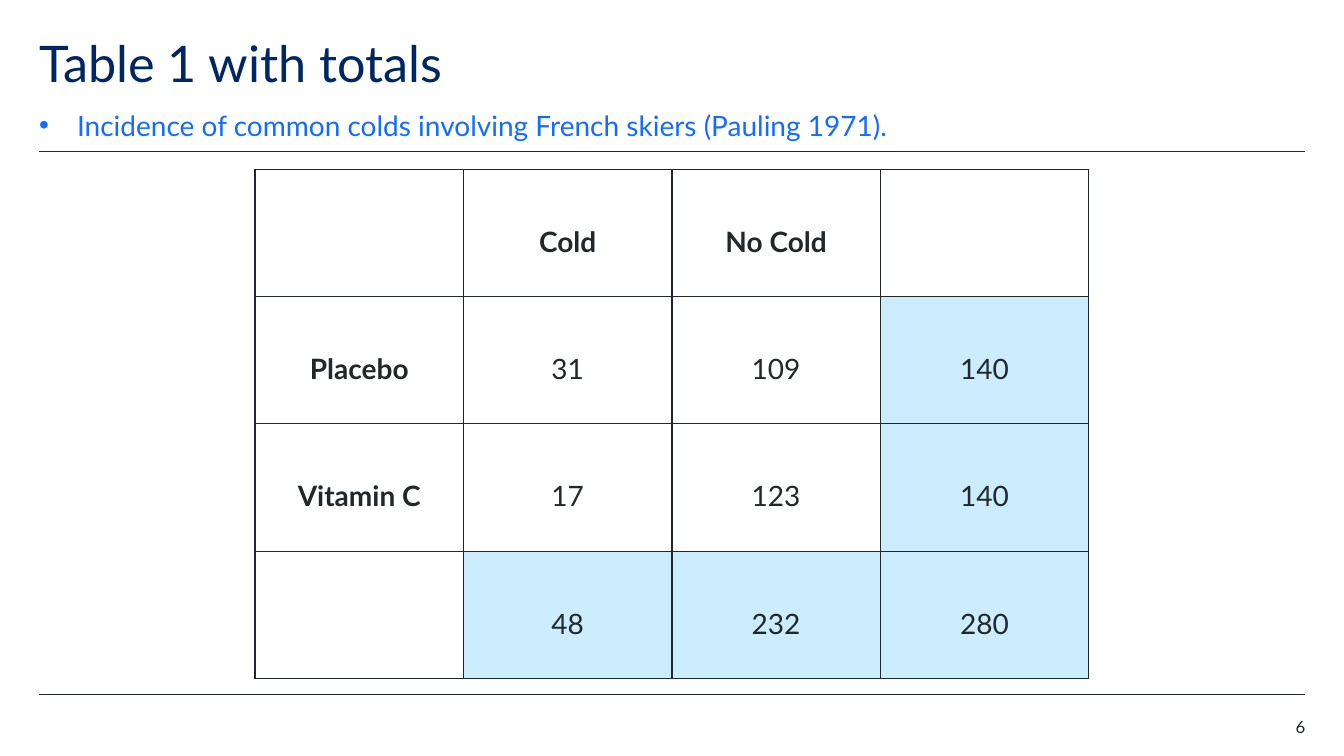
from dataclasses import dataclass

from lxml.etree import SubElement
from pptx import Presentation
from pptx.dml.color import RGBColor
from pptx.enum.shapes import MSO_CONNECTOR
from pptx.enum.text import MSO_ANCHOR, MSO_AUTO_SIZE, PP_ALIGN
from pptx.oxml.ns import qn
from pptx.slide import Slide
from pptx.table import _Cell as Cell
from pptx.util import Pt

NAVY = RGBColor(0x00, 0x26, 0x64)
BLUE = RGBColor(0x14, 0x6C, 0xFD)
INK = RGBColor(0x22, 0x27, 0x2B)
PALE_BLUE = RGBColor(0xCB, 0xED, 0xFD)
FONT = "Lato"
LEFT, RIGHT = 28, 932.4
RULES = (108, 496)
TABLE_LEFT, TABLE_TOP = 182.2, 121
COLUMN_WIDTH, ROW_HEIGHT = 148.9, 90.9
COUNTS = (
    ("", "Cold", "No Cold", ""),
    ("Placebo", "31", "109", "140"),
    ("Vitamin C", "17", "123", "140"),
    ("", "48", "232", "280"),
)


@dataclass(frozen=True)
class TextStyle:
    """Describe the look of one line of text."""

    size: float
    color: RGBColor
    spacing: float
    align: PP_ALIGN = PP_ALIGN.LEFT
    anchor: MSO_ANCHOR = MSO_ANCHOR.TOP
    bold: bool = False


@dataclass(frozen=True)
class Frame:
    """Hold a position and size in points."""

    left: float
    top: float
    width: float
    height: float


def write(frame, text: str, style: TextStyle) -> None:
    """Set one styled paragraph in a text frame."""
    frame.text = text
    paragraph = frame.paragraphs[0]
    paragraph.alignment = style.align
    paragraph.line_spacing = style.spacing
    paragraph.space_before = paragraph.space_after = Pt(0)
    for run in paragraph.runs:
        run.font.name = FONT
        run.font.size = Pt(style.size)
        run.font.bold = style.bold
        run.font.color.rgb = style.color


def fill_box(shape, place: Frame, text: str, style: TextStyle) -> None:
    """Place a text shape without insets and write its text."""
    shape.left, shape.top = Pt(place.left), Pt(place.top)
    shape.width, shape.height = Pt(place.width), Pt(place.height)
    frame = shape.text_frame
    frame.word_wrap = True
    frame.auto_size = MSO_AUTO_SIZE.NONE
    frame.vertical_anchor = style.anchor
    frame.margin_left = frame.margin_right = Pt(0)
    frame.margin_top = frame.margin_bottom = Pt(0)
    write(frame, text, style)


def remove_bullet(shape) -> None:
    """Clear the list bullet and indent of the first paragraph."""
    properties = shape.text_frame.paragraphs[0]._p.get_or_add_pPr()
    properties.set("marL", "0")
    properties.set("indent", "0")
    SubElement(properties, qn("a:buNone"))


def add_rule(slide: Slide, top: float) -> None:
    """Draw a thin line across the content width."""
    rule = slide.shapes.add_connector(
        MSO_CONNECTOR.STRAIGHT, Pt(LEFT), Pt(top), Pt(RIGHT), Pt(top)
    )
    rule.line.color.rgb = INK
    rule.line.width = Pt(0.5)
    SubElement(rule._element.spPr, qn("a:effectLst"))


def add_borders(cell: Cell) -> None:
    """Give all four sides of a cell a solid border."""
    properties = cell._tc.get_or_add_tcPr()
    for side in ("a:lnL", "a:lnR", "a:lnT", "a:lnB"):
        border = SubElement(properties, qn(side), w=str(Pt(1)))
        solid = SubElement(border, qn("a:solidFill"))
        SubElement(solid, qn("a:srgbClr"), val=str(INK))


def add_counts(slide: Slide) -> None:
    """Add the table of colds with its shaded totals."""
    size = len(COUNTS)
    table = slide.shapes.add_table(
        size, size, Pt(TABLE_LEFT), Pt(TABLE_TOP),
        Pt(COLUMN_WIDTH * size), Pt(ROW_HEIGHT * size),
    ).table
    table.first_row = table.horz_banding = False
    for column in table.columns:
        column.width = Pt(COLUMN_WIDTH)
    for row in table.rows:
        row.height = Pt(ROW_HEIGHT)
    for y, values in enumerate(COUNTS):
        for x, value in enumerate(values):
            cell = table.cell(y, x)
            add_borders(cell)
            if value and size - 1 in (x, y):
                cell.fill.solid()
                cell.fill.fore_color.rgb = PALE_BLUE
            else:
                cell.fill.background()
            cell.vertical_anchor = MSO_ANCHOR.MIDDLE
            cell.margin_top = cell.margin_bottom = Pt(0)
            heading = 0 in (x, y)
            style = TextStyle(20, INK, 1.5, PP_ALIGN.CENTER, bold=heading)
            write(cell.text_frame, value, style)


def main() -> None:
    """Build and save the slide."""
    deck = Presentation()
    deck.slide_width, deck.slide_height = Pt(960), Pt(540)
    slide = deck.slides.add_slide(deck.slide_layouts[1])
    for top in RULES:
        add_rule(slide, top)
    fill_box(slide.shapes.title, Frame(LEFT, 28, 793.5, 43.2),
             "Table 1 with totals", TextStyle(36, NAVY, 0.9))
    subtitle = slide.placeholders[1]
    remove_bullet(subtitle)
    fill_box(subtitle, Frame(LEFT, 77, 793.5, 24.5),
             "Incidence of common colds involving French skiers (Pauling 1971).",
             TextStyle(20, BLUE, 1.4, anchor=MSO_ANCHOR.BOTTOM))
    add_counts(slide)
    corner = Frame(RIGHT - 57, 513.4, 57, 14.4)
    page_number = slide.shapes.add_textbox(Pt(0), Pt(0), Pt(57), Pt(14.4))
    fill_box(page_number, corner, "6", TextStyle(12, INK, 0.9, PP_ALIGN.RIGHT))
    deck.save("out.pptx")


if __name__ == "__main__":
    main()
